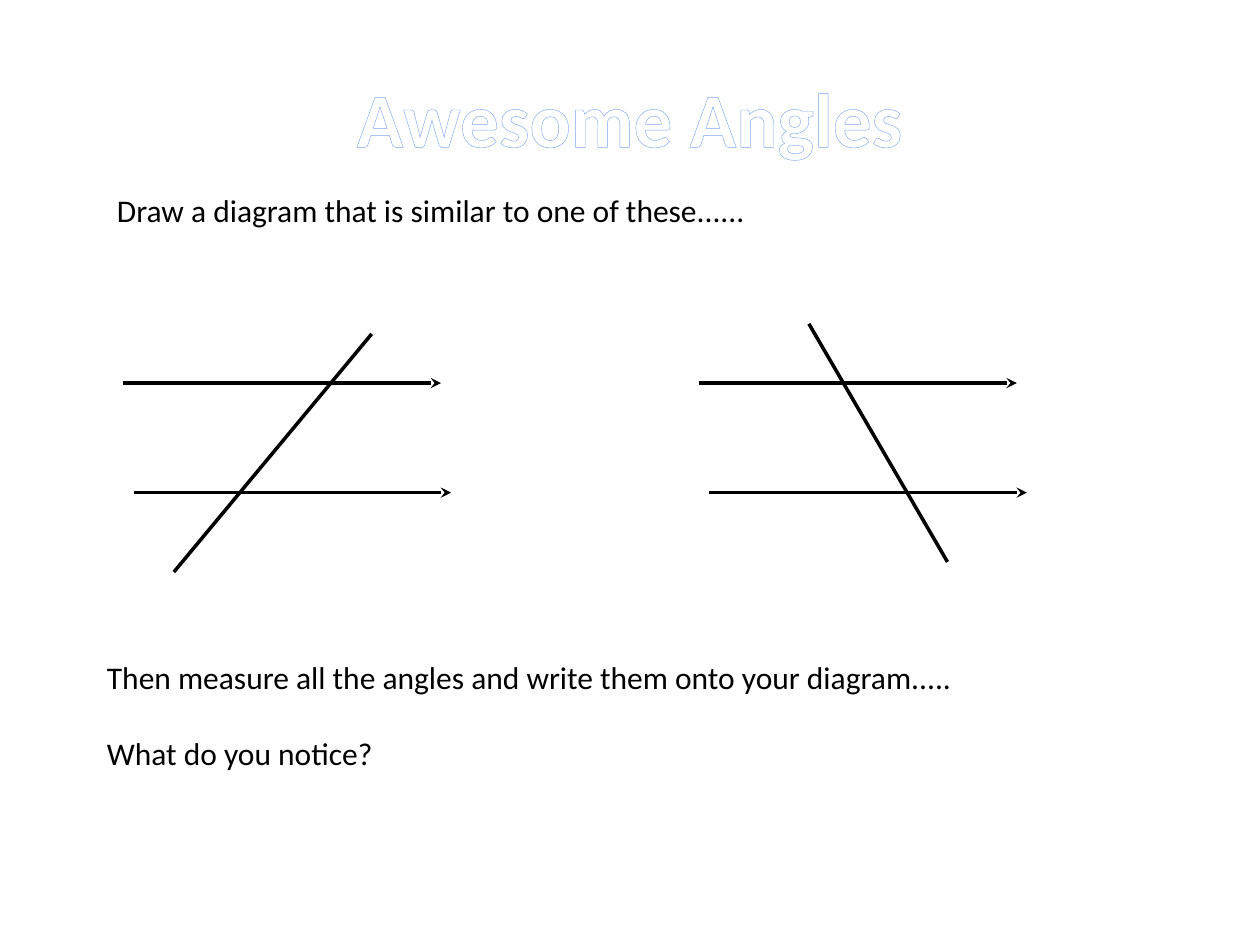
from dataclasses import dataclass

from lxml.etree import SubElement
from pptx import Presentation
from pptx.dml.color import RGBColor as RGB
from pptx.enum.shapes import MSO_CONNECTOR as CONN
from pptx.enum.text import MSO_ANCHOR as ANCHOR, MSO_AUTO_SIZE as FIT, PP_ALIGN as ALIGN
from pptx.oxml.ns import qn
from pptx.util import Inches, Pt


@dataclass(frozen=True)
class Theme:
    font: str = "Calibri"
    ink: str = "000000"
    paper: str = "FFFFFF"
    outline: str = "7EA6EA"
    title_size: float = 44
    body_size: float = 18
    line_width: float = 2
    outline_width: float = 2.48


class SlideBuilder:
    def __init__(self, slide, theme):
        self.slide = slide
        self.theme = theme

    def format_font(self, font, color, **values):
        for name, value in {"name": self.theme.font, **values}.items():
            setattr(font, name, value)
        font.color.rgb = RGB.from_string(color)

    def place(self, sp, box):
        for name, value in zip(("left", "top", "width", "height"), box):
            setattr(sp, name, Inches(value))

    def title(self, text, box):
        th = self.theme
        sp = self.slide.shapes.title
        self.place(sp, box)
        tf = sp.text_frame
        tf.vertical_anchor = ANCHOR.MIDDLE
        p = tf.paragraphs[0]
        p.alignment = ALIGN.CENTER
        r = p.add_run()
        r.text = text
        self.format_font(r.font, th.paper, size=Pt(th.title_size), bold=True)
        props = r._r.get_or_add_rPr()
        ln = SubElement(props, qn("a:ln"), w=str(Pt(th.outline_width)))
        fill = SubElement(ln, qn("a:solidFill"))
        SubElement(fill, qn("a:srgbClr"), val=th.outline)
        props.insert(0, ln)

    def text(self, lines, box, gap=0):
        tf = self.slide.shapes.add_textbox(*map(Inches, box)).text_frame
        tf.word_wrap = True
        tf.auto_size = FIT.SHAPE_TO_FIT_TEXT
        for i, line in enumerate(lines):
            p = tf.add_paragraph() if i else tf.paragraphs[0]
            if i:
                p.space_before = Pt(gap)
            r = p.add_run()
            r.text = line
            self.format_font(r.font, self.theme.ink, size=Pt(self.theme.body_size))

    def line(self, start, end, arrow=False):
        sp = self.slide.shapes.add_connector(CONN.STRAIGHT, *map(Inches, (*start, *end)))
        sp.line.width = Pt(self.theme.line_width)
        sp.line.color.rgb = RGB.from_string(self.theme.ink)
        props = sp._element.spPr
        if arrow:
            SubElement(props.find(qn("a:ln")), qn("a:tailEnd"), type="stealth")
        SubElement(props, qn("a:effectLst"))

    def parallels(self, left, transversal):
        length = 2.52
        for x, y in ((left, 3.04), (left + 0.08, 3.91)):
            self.line((x, y), (x + length, y), arrow=True)
        self.line(*transversal)


def main():
    prs = Presentation()
    prs.slide_width, prs.slide_height = Inches(10), Inches(7.5)
    s = SlideBuilder(prs.slides.add_slide(prs.slide_layouts[5]), Theme())
    s.title("Awesome Angles", (0.5, 0.3, 9, 1.25))
    s.parallels(0.98, ((1.38, 4.54), (2.95, 2.65)))
    s.parallels(5.55, ((7.52, 4.46), (6.42, 2.57)))
    s.text(["Draw a diagram that is similar to one of these......"], (0.83, 1.47, 6.14, 0.4))
    s.text(
        ["Then measure all the angles and write them onto your diagram.....", "What do you notice?"],
        (0.75, 5.17, 8.11, 1.01),
        gap=22,
    )
    prs.save("out.pptx")


if __name__ == "__main__":
    main()
